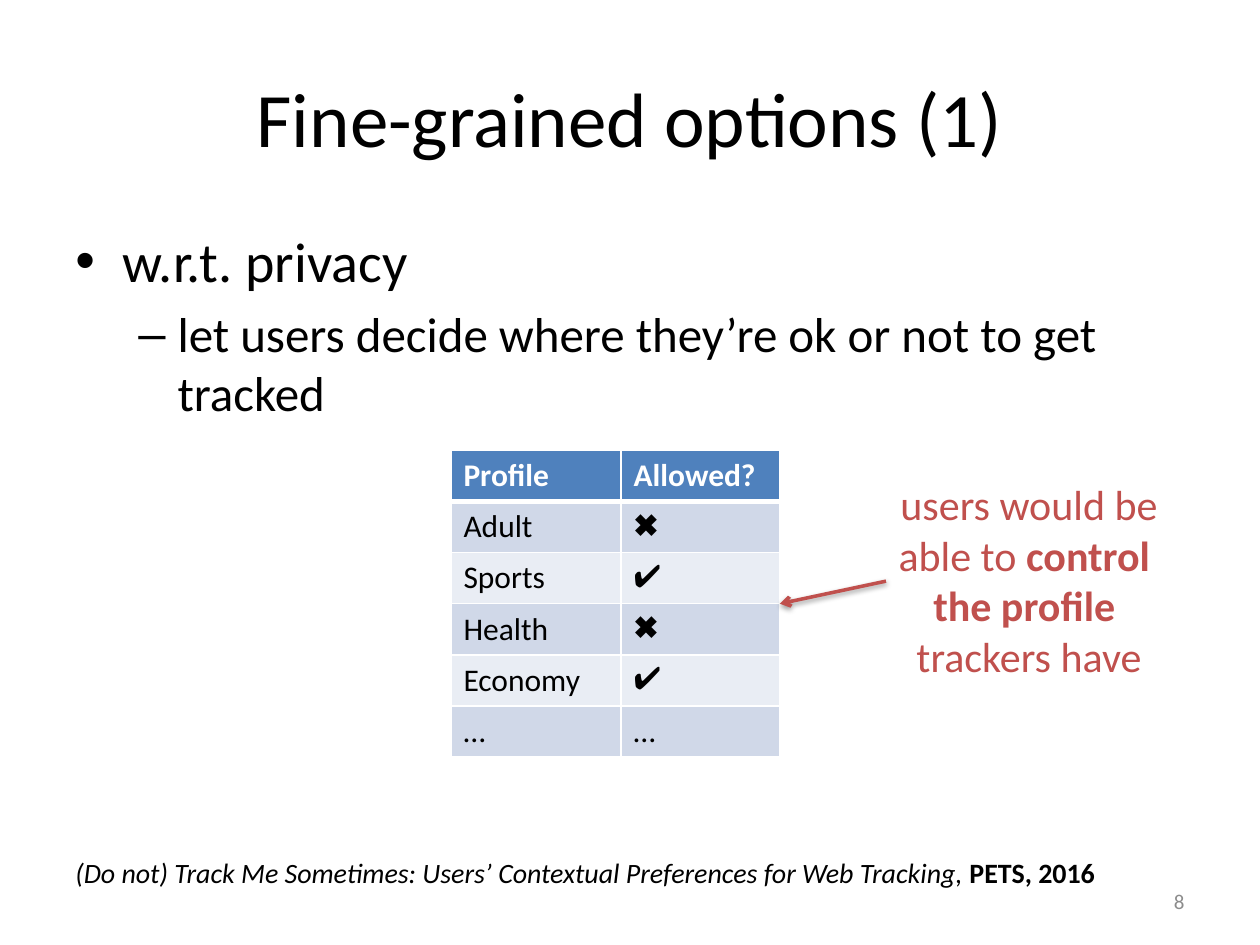
from lxml import etree
from pptx import Presentation
from pptx import util as u
from pptx.dml.color import RGBColor
from pptx.enum import shapes, text
from pptx.oxml import ns

COLOURS = {
    "ink": "000000", "white": "FFFFFF", "grey": "8C8C8C", "accent": "C0504D",
    "header": "4F81BD", "odd row": "D0D8E8", "even row": "E9EDF4",
}


def add_run(para, words, size, colour="ink", bold=False, italic=False, font="Calibri"):
    span = para.add_run()
    span.text = words
    span.font.size = u.Pt(size)
    span.font.name = font
    span.font.bold = bold
    span.font.italic = italic
    span.font.color.rgb = RGBColor.from_string(COLOURS[colour])


def add_xml(parent, tag, **attributes):
    element = etree.SubElement(parent, ns.qn(tag))
    for name, value in attributes.items():
        element.set(name, str(value))
    return element


deck = Presentation()
deck.slide_width, deck.slide_height = u.Cm(25.4), u.Cm(19.05)
page = deck.slides.add_slide(deck.slide_layouts[6])

# Text boxes: left, top, width, height, vertical anchor
top, middle = text.MSO_ANCHOR.TOP, text.MSO_ANCHOR.MIDDLE
frames = {
    "title": (1.27, 0.76, 22.86, 3.18, middle),
    "body": (1.27, 4.45, 22.86, 12.57, top),
    "number": (18.21, 17.65, 5.92, 1.02, middle),
    "citation": (1.27, 17.12, 22.86, 0.94, top),
    "callout": (17.86, 9.53, 5.77, 4.37, top),
}
boxes = {}
for name, (*place, anchor) in frames.items():
    box = page.shapes.add_textbox(*map(u.Cm, place))
    box.text_frame.word_wrap = name != "callout"
    box.text_frame.vertical_anchor = anchor
    boxes[name] = box

para = boxes["title"].text_frame.paragraphs[0]
para.alignment = text.PP_ALIGN.CENTER
add_run(para, "Fine-grained options (1)", 44)

# Bullets: runs, size, bullet, level, text indent and hanging indent
bullets = [
    (["w", ".r.t. privacy"], 32, "•", 0, 0.95, 0.95),
    (["let users decide where they’re ok or not to get tracked"], 28, "–", 1, 2.06, 0.79),
]
body = boxes["body"].text_frame
for index, (runs, size, bullet, level, indent, hanging) in enumerate(bullets):
    para = body.add_paragraph() if index else body.paragraphs[0]
    para.level = level
    para.space_before = u.Pt(size * 0.2)
    for words in runs:
        add_run(para, words, size)
    properties = para._p.get_or_add_pPr()
    properties.set("marL", str(u.Cm(indent)))
    properties.set("indent", str(-u.Cm(hanging)))
    add_xml(properties, "a:buFont", typeface="Arial")
    add_xml(properties, "a:buChar", char=bullet)

para = boxes["number"].text_frame.paragraphs[0]
para.alignment = text.PP_ALIGN.RIGHT
add_run(para, "8", 12, "grey")

para = boxes["citation"].text_frame.paragraphs[0]
add_run(para, "(Do not) Track Me Sometimes: Users’ Contextual Preferences for Web Tracking, ",
        16, italic=True)
add_run(para, "PETS, 2016", 16, bold=True)

# Callout lines: runs of (text, bold)
callout_lines = [
    [("users would be ", False)],
    [("able to ", False), ("control ", True)],
    [("the profile ", True)],
    [("trackers have", False)],
]
callout = boxes["callout"].text_frame
for index, line in enumerate(callout_lines):
    para = callout.add_paragraph() if index else callout.paragraphs[0]
    para.alignment = text.PP_ALIGN.CENTER
    for words, bold in line:
        add_run(para, words, 24, "accent", bold)

# Profile table
rows = [
    ("Profile", "Allowed?"), ("Adult", "✖"), ("Sports", "✔"),
    ("Health", "✖"), ("Economy", "✔"), ("…", "…"),
]
widths = [3.43, 3.2]
row_height = 1.03
profile = page.shapes.add_table(
    len(rows), len(widths), u.Cm(9.09), u.Cm(9.08),
    u.Cm(sum(widths)), u.Cm(row_height * len(rows)))
table = profile.table
for column, width in zip(table.columns, widths):
    column.width = u.Cm(width)
for r, row in enumerate(rows):
    table.rows[r].height = u.Cm(row_height)
    header = r == 0
    fill = "header" if header else "odd row" if r % 2 else "even row"
    for c, words in enumerate(row):
        cell = table.cell(r, c)
        add_run(cell.text_frame.paragraphs[0], words, 18, "white" if header else "ink",
                header, font="Arial" if words in "✖✔" else "Calibri")
        for side in ("L", "R", "T", "B"):
            thick = (r, side) in ((0, "B"), (1, "T"))
            border = add_xml(cell._tc.get_or_add_tcPr(), f"a:ln{side}",
                             w=u.Pt(3 if thick else 1))
            add_xml(add_xml(border, "a:solidFill"), "a:srgbClr", val=COLOURS["white"])
        cell.fill.solid()
        cell.fill.fore_color.rgb = RGBColor.from_string(COLOURS[fill])

# Arrow from the callout to the table, with a soft shadow
arrow = page.shapes.add_connector(shapes.MSO_CONNECTOR.STRAIGHT, 0, 0, 0, 0)
arrow.begin_connect(boxes["callout"], 1)
arrow.end_connect(profile, 3)
arrow.line.width = u.Pt(2)
arrow.line.color.rgb = RGBColor.from_string(COLOURS["accent"])
add_xml(arrow.line._get_or_add_ln(), "a:tailEnd", type="arrow")
effects = add_xml(arrow._element.spPr, "a:effectLst")
shadow = add_xml(effects, "a:outerShdw", blurRad=u.Pt(3.1), dist=u.Pt(1.6),
                 dir=90 * 60000, rotWithShape=0)
add_xml(add_xml(shadow, "a:srgbClr", val=COLOURS["ink"]), "a:alpha", val=38000)

deck.save("out.pptx")
